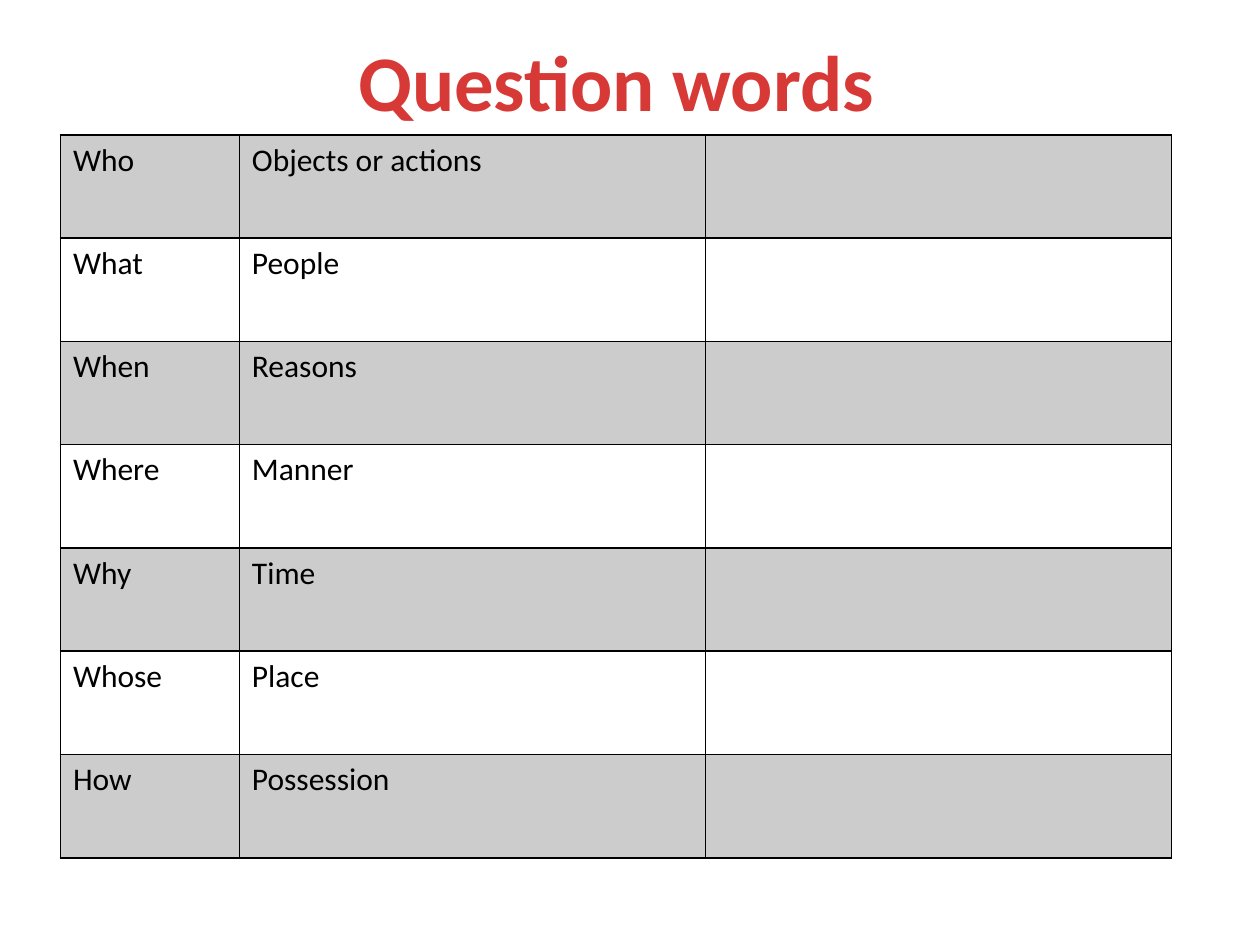
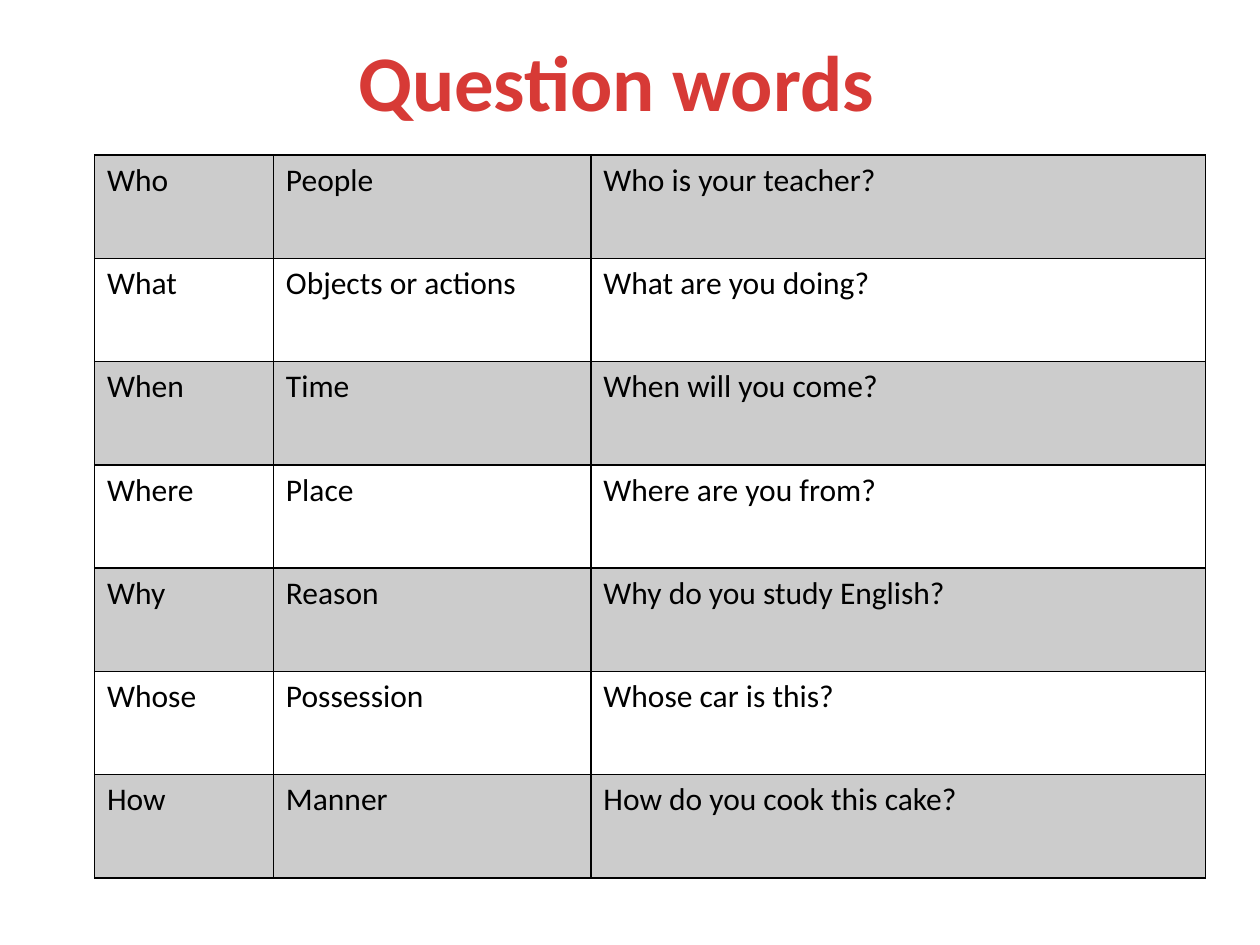
from lxml.etree import SubElement
from pptx import Presentation
from pptx.dml.color import RGBColor
from pptx.enum.text import MSO_AUTO_SIZE as AutoSize, PP_ALIGN as Align
from pptx.oxml import parse_xml
from pptx.oxml.ns import nsdecls, qn
from pptx.util import Pt

PX = 9144  # 100 px to the inch
FONT = "Calibri"
RED = RGBColor(0xD7, 0x3A, 0x36)
BLACK = RGBColor(0x00, 0x00, 0x00)
BAND_ALPHA = 20000  # 20 % opaque
ROW_HEIGHT = 82

QUESTION_WORDS = ["Who", "What", "When", "Where", "Why", "Whose", "How"]
# left, top, column widths, meanings, examples
PAGES = [
    (48, 107, (142, 370, 370),
     ["Objects or actions", "People", "Reasons", "Manner", "Time", "Place", "Possession"],
     [""] * len(QUESTION_WORDS)),
    (75, 123, (142, 252, 488),
     ["People", "Objects or actions", "Time", "Place", "Reason", "Possession", "Manner"],
     ["Who is your teacher?", "What are you doing?", "When will you come?",
      "Where are you from?", "Why do you study English?", "Whose car is this?",
      "How do you cook this cake?"]),
]


def add_span(para, text, size, color, bold=False):
    span = para.add_run()
    span.text = text
    span.font.name = FONT
    span.font.size = Pt(size)
    span.font.bold = bold
    span.font.color.rgb = color


def style_cell(cell, banded):
    """Give the cell thin black borders and, on banded rows, a see-through black fill."""
    properties = cell._tc.get_or_add_tcPr()
    if banded:
        cell.fill.solid()
        cell.fill.fore_color.rgb = BLACK
        color = properties.find(qn("a:solidFill"))[0]
        SubElement(color, qn("a:alpha")).set("val", str(BAND_ALPHA))
    else:
        cell.fill.background()
    for index, side in enumerate("LRTB"):
        properties.insert(index, parse_xml(
            f'<a:ln{side} {nsdecls("a")} w="{Pt(1)}"><a:solidFill>'
            f'<a:srgbClr val="{BLACK}"/></a:solidFill></a:ln{side}>'))


deck = Presentation()
deck.slide_width, deck.slide_height = 1000 * PX, 750 * PX

for left, top, widths, meanings, examples in PAGES:
    page = deck.slides.add_slide(deck.slide_layouts[6])

    title = page.shapes.add_textbox(272 * PX, 21 * PX, 434 * PX, 86 * PX)
    title.text_frame.word_wrap = False
    title.text_frame.auto_size = AutoSize.SHAPE_TO_FIT_TEXT
    para = title.text_frame.paragraphs[0]
    para.alignment = Align.CENTER
    add_span(para, "Question words", 45, RED, bold=True)

    rows = list(zip(QUESTION_WORDS, meanings, examples))
    table = page.shapes.add_table(
        len(rows), len(widths), left * PX, top * PX,
        sum(widths) * PX, len(rows) * ROW_HEIGHT * PX).table
    table.first_row = table.horz_banding = False
    for column, width in zip(table.columns, widths):
        column.width = width * PX
    for row_index, texts in enumerate(rows):
        table.rows[row_index].height = ROW_HEIGHT * PX
        for column_index, text in enumerate(texts):
            cell = table.cell(row_index, column_index)
            style_cell(cell, banded=row_index % 2 == 0)
            if text:
                add_span(cell.text_frame.paragraphs[0], text, 18, BLACK)

deck.save("out.pptx")
